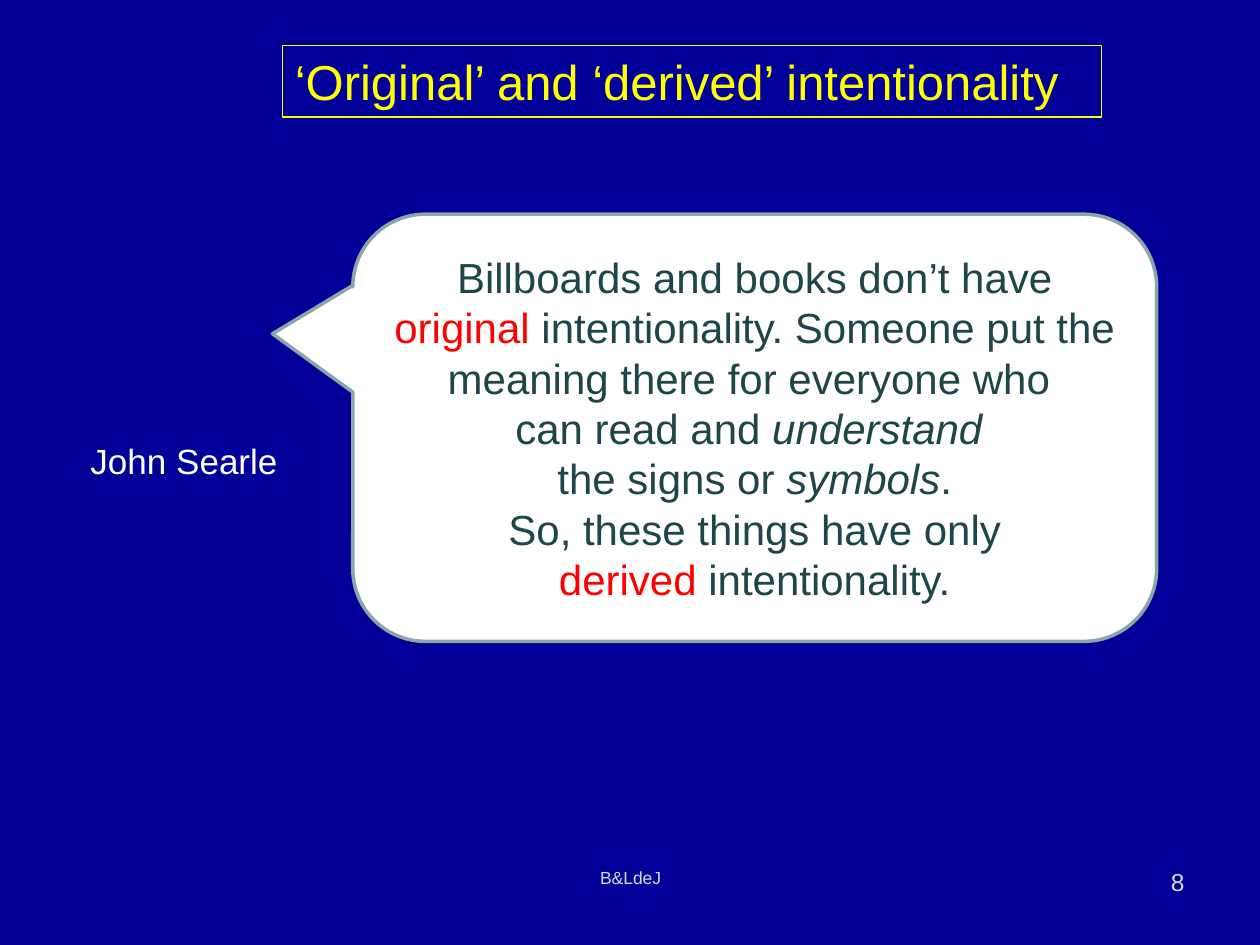
from pptx import Presentation
from pptx import util as u
from pptx.dml.color import RGBColor
from pptx.enum import shapes, text

COLOURS = {
    "background": "000099", "title": "FFFF00", "name": "FFFFFF",
    "footer": "D9D9D9", "bubble": "FFFFFF", "outline": "8AA6A8",
    "speech": "1E4649", "accent": "FF0000",
}
WIDTH, HEIGHT = 10, 7.5
FOOTER_TOP, FOOTER_HEIGHT = 6.83, 0.52
LEFT, CENTER, RIGHT = text.PP_ALIGN.LEFT, text.PP_ALIGN.CENTER, text.PP_ALIGN.RIGHT

# Content: paragraphs are lists of (words, style) runs
TITLE = [[("‘Original’ and ‘derived’ intentionality", "")]]
SPEECH = [
    [("Billboards and books don’t have", "")],
    [("original", "accent"),
     (" intentionality. Someone put the meaning there for everyone who ", "")],
    [("can read and ", ""), ("understand ", "italic")],
    [("the signs or ", ""), ("symbols", "italic"), (".", "")],
    [("So, these things have only", "")],
    [(" ", ""), ("derived", "accent"), (" intentionality. ", "")],
]
# Words, box (left, top, width, height), size, colour, alignment, wrap
LABELS = [
    ("John Searle", (0.62, 3.44, 1.7, 0.44), 20, "name", LEFT, False),
    ("B&LdeJ", (3.42, FOOTER_TOP, 3.17, FOOTER_HEIGHT), 10, "footer", CENTER, True),
    ("8", (7.17, FOOTER_TOP, 2.33, FOOTER_HEIGHT), 14, "footer", RIGHT, True),
]
TITLE_BOX = (2.24, 0.36, 6.5, 0.57)
BUBBLE_BOX = (2.8, 1.7, 6.38, 3.39)
BUBBLE_SHAPE = (-0.6, -0.22, 0.17)  # pointer x, pointer y, corner radius


def colour(name):
    return RGBColor.from_string(COLOURS[name])


def inches(box):
    return [u.Inches(length) for length in box]


def write(shape, paragraphs, size, colour_name, alignment, anchor, wrap=True):
    frame = shape.text_frame
    frame_format = {"auto_size": text.MSO_AUTO_SIZE.NONE,
                    "word_wrap": wrap, "vertical_anchor": anchor}
    for key, value in frame_format.items():
        setattr(frame, key, value)
    for index, runs in enumerate(paragraphs):
        paragraph = frame.add_paragraph() if index else frame.paragraphs[0]
        paragraph.alignment = alignment
        for words, style in runs:
            run = paragraph.add_run()
            run.text = words
            font_format = {"name": "Arial", "size": u.Pt(size),
                           "italic": style == "italic"}
            for key, value in font_format.items():
                setattr(run.font, key, value)
            run.font.color.rgb = colour("accent" if style == "accent" else colour_name)


def outline(shape, colour_name, width):
    shape.line.color.rgb = colour(colour_name)
    shape.line.width = u.Pt(width)


def main():
    presentation = Presentation()
    presentation.slide_width = u.Inches(WIDTH)
    presentation.slide_height = u.Inches(HEIGHT)
    slide = presentation.slides.add_slide(presentation.slide_layouts[5])
    slide.background.fill.solid()
    slide.background.fill.fore_color.rgb = colour("background")

    # Framed title
    title = slide.shapes.title
    title.left, title.top, title.width, title.height = inches(TITLE_BOX)
    outline(title, "title", 0.75)
    write(title, TITLE, 28, "title", LEFT, text.MSO_ANCHOR.TOP, False)

    # Speaker name and footer
    for words, box, size, colour_name, alignment, wrap in LABELS:
        label = slide.shapes.add_textbox(*inches(box))
        write(label, [[(words, "")]], size, colour_name, alignment,
              text.MSO_ANCHOR.TOP, wrap)

    # Speech bubble
    bubble = slide.shapes.add_shape(
        shapes.MSO_SHAPE.ROUNDED_RECTANGULAR_CALLOUT, *inches(BUBBLE_BOX))
    for index, value in enumerate(BUBBLE_SHAPE):
        bubble.adjustments[index] = value
    bubble.shadow.inherit = False
    bubble.fill.solid()
    bubble.fill.fore_color.rgb = colour("bubble")
    outline(bubble, "outline", 2)
    write(bubble, SPEECH, 24, "speech", CENTER, text.MSO_ANCHOR.MIDDLE)

    presentation.save("out.pptx")


if __name__ == "__main__":
    main()
